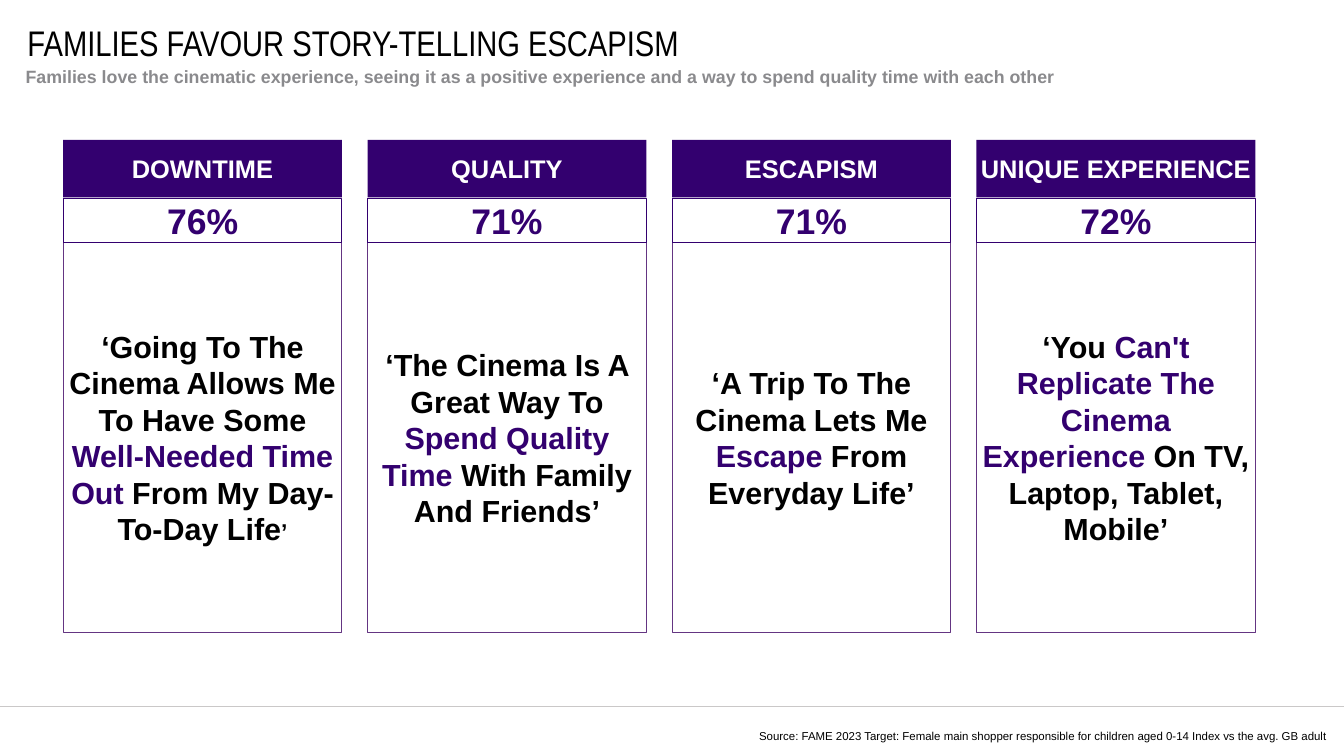
from pptx import Presentation
from pptx.dml.color import RGBColor
from pptx.enum.shapes import MSO_CONNECTOR, MSO_SHAPE
from pptx.enum.text import MSO_ANCHOR, MSO_AUTO_SIZE, PP_ALIGN
from pptx.oxml.ns import qn
from pptx.util import Pt
from lxml.etree import SubElement

THEME = {
    "purple": RGBColor.from_string("33006F"),
    "outline": RGBColor.from_string("643582"),
    "black": RGBColor.from_string("000000"),
    "white": RGBColor.from_string("FFFFFF"),
    "grey": RGBColor.from_string("8A8A8D"),
    "rule": RGBColor.from_string("CAC8C8"),
    "font": "Arial",
    "title_font": "Arial Narrow",
    "title": 28,
    "subtitle": 14,
    "heading": 20,
    "percent": 28,
    "quote": 24,
    "quote_end": 18,
    "source": 9,
}
PX = 9144


def place(box, left, top, width, height):
    box.left, box.top = left * PX, top * PX
    box.width, box.height = width * PX, height * PX


def write(box, spans, size, font="font", bold=True, align=PP_ALIGN.LEFT,
          anchor=MSO_ANCHOR.MIDDLE, fit=MSO_AUTO_SIZE.NONE, spacing=None):
    frame = box.text_frame
    frame.word_wrap = True
    frame.auto_size = fit
    frame.vertical_anchor = anchor
    frame.margin_left = frame.margin_right = frame.margin_top = frame.margin_bottom = 0
    para = frame.paragraphs[0]
    para.alignment = align
    para.space_before = Pt(0)
    if spacing:
        para.line_spacing = Pt(spacing)
    for text, color, *own_size in spans:
        span = para.add_run()
        span.text = text
        span.font.name = THEME[font]
        span.font.size = Pt(THEME[own_size[0] if own_size else size])
        span.font.bold = bold
        span.font.color.rgb = THEME[color]


deck = Presentation()
deck.slide_width, deck.slide_height = 1470 * PX, 827 * PX
page = deck.slides.add_slide(deck.slide_layouts.get_by_name("Section Header"))

rule = page.shapes.add_connector(MSO_CONNECTOR.STRAIGHT, 0, 773 * PX, 1470 * PX, 773 * PX)
rule.line.color.rgb = THEME["rule"]
rule.line.width = Pt(0.5)
SubElement(rule._element.spPr, qn("a:effectLst"))

title, subtitle = page.placeholders
place(title, 30, 30, 1358, 32)
write(title, [("FAMILIES FAVOUR STORY-TELLING ESCAPISM", "black")], "title",
      font="title_font", bold=False)
place(subtitle, 28, 72, 1359, 48)
write(subtitle, [("Families love the cinematic experience, seeing it as a positive experience "
                  "and a way to spend quality time with each other", "grey")],
      "subtitle", anchor=MSO_ANCHOR.TOP)

cards = [
    ("DOWNTIME", "76%", [
        ("‘Going To The Cinema Allows Me To Have Some ", "black"),
        ("Well-Needed Time Out ", "purple"),
        ("From My Day-To-Day Life", "black"),
        ("’", "black", "quote_end")]),
    ("QUALITY", "71%", [
        ("‘The Cinema Is A Great Way To ", "black"),
        ("Spend Quality Time ", "purple"),
        ("With Family And Friends’", "black")]),
    ("ESCAPISM", "71%", [
        ("‘A Trip To The Cinema Lets Me ", "black"),
        ("Escape", "purple"),
        (" From Everyday Life’", "black")]),
    ("UNIQUE EXPERIENCE", "72%", [
        ("‘You ", "black"),
        ("Can't Replicate The Cinema Experience ", "purple"),
        ("On TV, Laptop, Tablet, Mobile’", "black")]),
]
CARD_LEFT, CARD_PITCH, CARD_WIDTH = 69, 333, 305

for column, (heading, percent, quote) in enumerate(cards):
    left = CARD_LEFT + column * CARD_PITCH
    parts = [
        (265, 427, quote, "quote", None, "outline"),
        (217, 48, [(percent, "purple")], "percent", None, "purple"),
        (153, 63, [(heading, "white")], "heading", "purple", None),
    ]
    for top, height, spans, size, fill, line in parts:
        box = page.shapes.add_shape(MSO_SHAPE.RECTANGLE, left * PX, top * PX,
                                    CARD_WIDTH * PX, height * PX)
        box.shadow.inherit = False
        if fill:
            box.fill.solid()
            box.fill.fore_color.rgb = THEME[fill]
        else:
            box.fill.background()
        if line:
            box.line.color.rgb = THEME[line]
            box.line.width = Pt(0.75)
        else:
            box.line.fill.background()
        write(box, spans, size, align=PP_ALIGN.CENTER)

source = page.shapes.add_textbox(726 * PX, 788 * PX, 728 * PX, 23 * PX)
write(source, [("Source: FAME 2023 Target: Female main shopper responsible for children "
                "aged 0-14 Index vs the avg. GB adult ", "black")],
      "source", bold=False, align=PP_ALIGN.RIGHT,
      fit=MSO_AUTO_SIZE.SHAPE_TO_FIT_TEXT, spacing=19)

deck.save("out.pptx")
